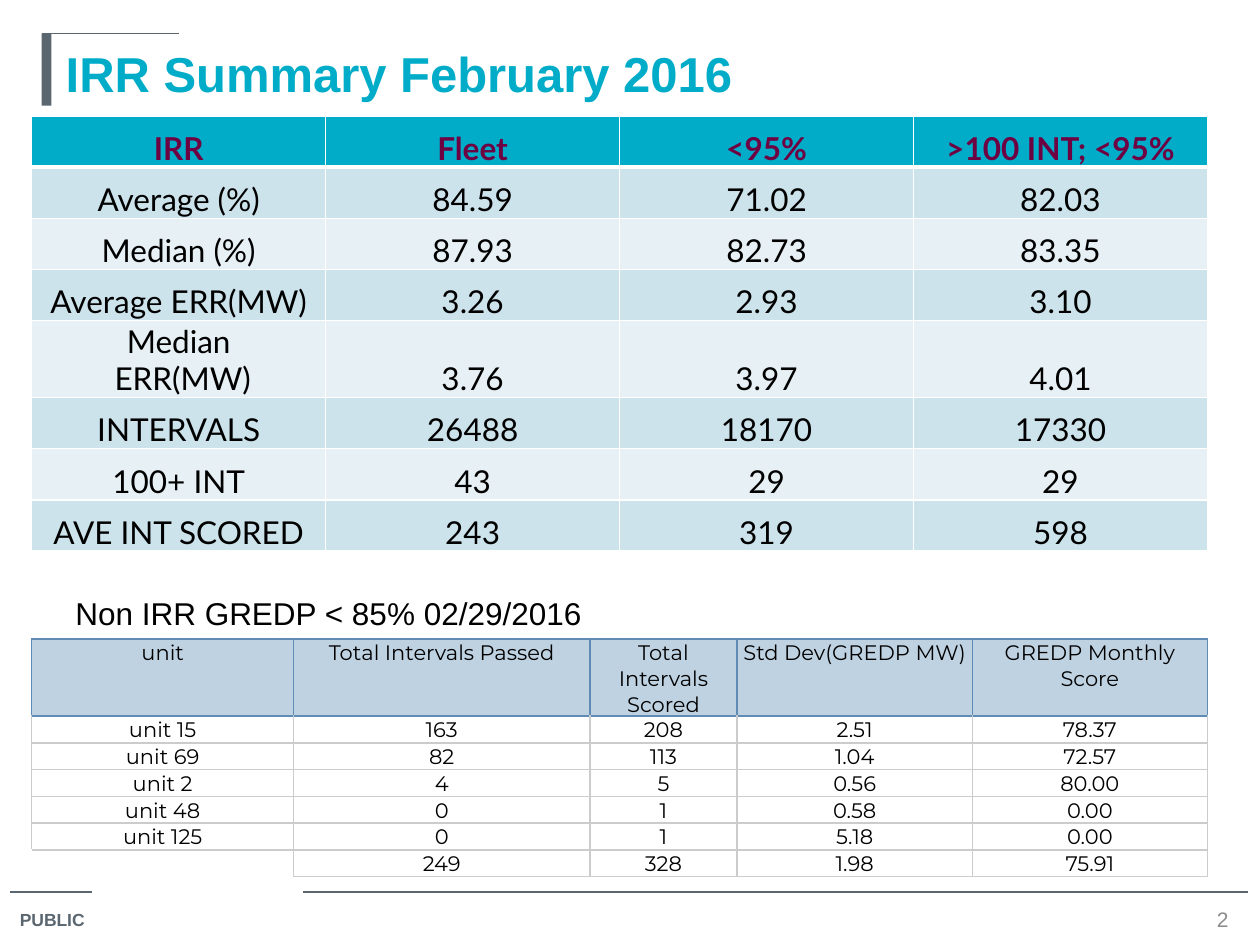
from dataclasses import dataclass

from lxml import etree
from pptx import Presentation
from pptx.dml.color import RGBColor
from pptx.enum.shapes import MSO_CONNECTOR, MSO_SHAPE
from pptx.enum.text import MSO_ANCHOR, PP_ALIGN
from pptx.oxml.ns import qn
from pptx.util import Cm, Pt

STRAIGHT = MSO_CONNECTOR.STRAIGHT
RECTANGLE = MSO_SHAPE.RECTANGLE
TOP, MIDDLE, BOTTOM = MSO_ANCHOR.TOP, MSO_ANCHOR.MIDDLE, MSO_ANCHOR.BOTTOM
LEFT, CENTER = PP_ALIGN.LEFT, PP_ALIGN.CENTER
TITLE_ONLY = 5


@dataclass(frozen=True)
class Theme:
    """Colours, fonts and type sizes of the slide."""
    teal: str = "00ACC8"
    slate: str = "5B6770"
    plum: str = "6D0142"
    black: str = "000000"
    white: str = "FFFFFF"
    number_gray: str = "8C8C8C"
    band_dark: str = "CCE3EB"
    band_light: str = "E7F1F5"
    unit_header: str = "BFD2E2"
    unit_header_line: str = "608BB4"
    unit_line: str = "CCCCCC"
    main_font: str = "Arial"
    summary_font: str = "Lato"
    unit_font: str = "Montserrat"
    title_size: int = 28
    body_size: int = 18
    small_size: int = 12
    footer_size: int = 10
    rule_width: float = 0.75


@dataclass(frozen=True)
class Box:
    """Position and size in centimetres."""
    left: float
    top: float
    width: float
    height: float


THEME = Theme()

SUMMARY_ROWS = [
    ("IRR", "Fleet", "<95%", ">100 INT; <95%"),
    ("Average (%)", "84.59", "71.02", "82.03"),
    ("Median (%)", "87.93", "82.73", "83.35"),
    ("Average ERR(MW)", "3.26", "2.93", "3.10"),
    ("Median\n ERR(MW)", "3.76", "3.97", "4.01"),
    ("INTERVALS", "26488", "18170", "17330"),
    ("100+ INT", "43", "29", "29"),
    ("AVE INT SCORED", "243", "319", "598"),
]
UNIT_ROWS = [
    ("unit", "Total Intervals Passed", "Total Intervals Scored",
     "Std Dev(GREDP MW)", "GREDP Monthly Score"),
    ("unit 15", "163", "208", "2.51", "78.37"),
    ("unit 69", "82", "113", "1.04", "72.57"),
    ("unit 2", "4", "5", "0.56", "80.00"),
    ("unit 48", "0", "1", "0.58", "0.00"),
    ("unit 125", "0", "1", "5.18", "0.00"),
    ("", "249", "328", "1.98", "75.91"),
]
UNIT_COLUMNS = (5.28, 5.97, 2.97, 4.74, 4.74)


def write_text(frame, text, font, size, color, bold=False, align=LEFT):
    """Write one paragraph per line of text, each with one run."""
    for index, line in enumerate(text.split("\n")):
        paragraph = frame.paragraphs[0] if index == 0 else frame.add_paragraph()
        paragraph.alignment = align
        if not line:
            etree.SubElement(paragraph._p, qn("a:endParaRPr"), sz=str(size * 100))
            continue
        run = paragraph.add_run()
        run.text = line
        run.font.name, run.font.size, run.font.bold = font, Pt(size), bold
        run.font.color.rgb = RGBColor.from_string(color)


def add_label(slide, box, text, size, color, bold=False):
    """Add a text box in the main font and return its frame."""
    shape = slide.shapes.add_textbox(Cm(box.left), Cm(box.top), Cm(box.width), Cm(box.height))
    frame = shape.text_frame
    frame.word_wrap = True
    write_text(frame, text, THEME.main_font, size, color, bold)
    return frame


def add_rule(slide, left, top, width):
    """Add a thin horizontal rule."""
    rule = slide.shapes.add_connector(STRAIGHT, Cm(left), Cm(top), Cm(left + width), Cm(top))
    rule.line.color.rgb = RGBColor.from_string(THEME.slate)
    rule.line.width = Pt(THEME.rule_width)
    etree.SubElement(rule._element.spPr, qn("a:effectLst"))


def set_borders(cell, borders):
    """Draw cell borders given as side: (colour, points)."""
    properties = cell._tc.get_or_add_tcPr()
    for side in "LRTB":
        if side in borders:
            color, width = borders[side]
            line = etree.SubElement(properties, qn(f"a:ln{side}"), w=str(Pt(width)))
            fill = etree.SubElement(line, qn("a:solidFill"))
            etree.SubElement(fill, qn("a:srgbClr"), val=color)


def add_grid(slide, box, rows, column_widths, style_cell):
    """Add a table whose cells are styled by style_cell(row, column)."""
    table = slide.shapes.add_table(
        len(rows), len(column_widths),
        Cm(box.left), Cm(box.top), Cm(box.width), Cm(box.height)).table
    table.horz_banding = False
    for column, width in zip(table.columns, column_widths):
        column.width = Cm(width)
    for row_index, values in enumerate(rows):
        table.rows[row_index].height = Cm(box.height / len(rows))
        for column_index, value in enumerate(values):
            cell = table.cell(row_index, column_index)
            fill, borders, anchor, text_style = style_cell(row_index, column_index)
            cell.margin_left = cell.margin_right = cell.margin_top = Cm(0.03)
            cell.margin_bottom = 0
            cell.vertical_anchor = anchor
            set_borders(cell, borders)
            if fill:
                cell.fill.solid()
                cell.fill.fore_color.rgb = RGBColor.from_string(fill)
            else:
                cell.fill.background()
            write_text(cell.text_frame, value, align=CENTER, **text_style)


def add_summary_table(slide, box):
    """Add the banded IRR summary table."""
    def style_cell(row, column):
        """Style a header cell or a banded cell."""
        header = row == 0
        fill = THEME.teal if header else (THEME.band_light, THEME.band_dark)[row % 2]
        borders = dict.fromkeys("LRTB", (THEME.white, 1))
        if row < 2:
            borders["B" if header else "T"] = (THEME.white, 3)
        return fill, borders, BOTTOM, dict(
            font=THEME.summary_font, size=THEME.body_size, bold=header,
            color=THEME.plum if header else THEME.black)

    columns = len(SUMMARY_ROWS[0])
    add_grid(slide, box, SUMMARY_ROWS, [box.width / columns] * columns, style_cell)


def add_unit_table(slide, box):
    """Add the table of units with low scores."""
    def style_cell(row, column):
        """Style a header cell, a unit cell or the open corner."""
        header = row == 0
        sides = "RT" if not UNIT_ROWS[row][column] else "LRTB"
        color = THEME.unit_header_line if header else THEME.unit_line
        borders = dict.fromkeys(sides, (color, 1))
        if row == 1:
            borders["T"] = (THEME.unit_header_line, 1)
        return THEME.unit_header if header else None, borders, TOP, dict(
            font=THEME.unit_font, size=THEME.small_size, color=THEME.black)

    add_grid(slide, box, UNIT_ROWS, UNIT_COLUMNS, style_cell)


def add_heading(slide, box):
    """Place the title with its accent bar and rule."""
    bar = slide.shapes.add_shape(
        RECTANGLE, Cm(box.left), Cm(box.top), Cm(0.2), Cm(1.45))
    bar.shadow.inherit = False
    bar.fill.solid()
    bar.fill.fore_color.rgb = RGBColor.from_string(THEME.slate)
    bar.line.fill.background()
    add_rule(slide, box.left, box.top, 2.77)
    title = slide.shapes.title
    title.left, title.top = Cm(box.left + 0.23), Cm(box.top)
    title.width, title.height = Cm(box.width - 0.23), Cm(box.height)
    frame = title.text_frame
    frame.vertical_anchor = TOP
    frame.margin_top = Cm(0.2)
    write_text(frame, "IRR Summary February 2016", THEME.main_font,
               THEME.title_size, THEME.teal, bold=True)


def add_footer(slide, box):
    """Place the footer rules, the classification and the page number."""
    add_rule(slide, box.left + 0.05, box.top, 1.65)
    add_rule(slide, box.left + 5.95, box.top, box.width - 5.95)
    add_label(slide, Box(box.left, box.top + 0.23, 1.96, 0.71), "PUBLIC",
              THEME.footer_size, THEME.slate, bold=True)
    number = add_label(slide, Box(box.left + 24.18, box.top + 0.26, 0.64, 0.58), "2",
                       THEME.small_size, THEME.number_gray)
    number.margin_left = number.margin_right = number.margin_top = number.margin_bottom = 0
    number.vertical_anchor = MIDDLE
    number.paragraphs[0].alignment = CENTER


def main():
    """Build and save the slide."""
    presentation = Presentation()
    presentation.slide_width, presentation.slide_height = Cm(25.4), Cm(19.05)
    slide = presentation.slides.add_slide(presentation.slide_layouts[TITLE_ONLY])
    add_footer(slide, Box(0.15, 17.98, 25, 0.95))
    add_heading(slide, Box(0.84, 0.68, 23.72, 1.98))
    add_summary_table(slide, Box(0.64, 2.34, 23.7, 8.24))
    add_label(slide, Box(1.27, 11.86, 12.27, 1.02), "Non IRR GREDP < 85% 02/29/2016",
              THEME.body_size, THEME.black)
    add_unit_table(slide, Box(0.64, 12.88, 23.7, 3.36))
    presentation.save("out.pptx")


if __name__ == "__main__":
    main()
